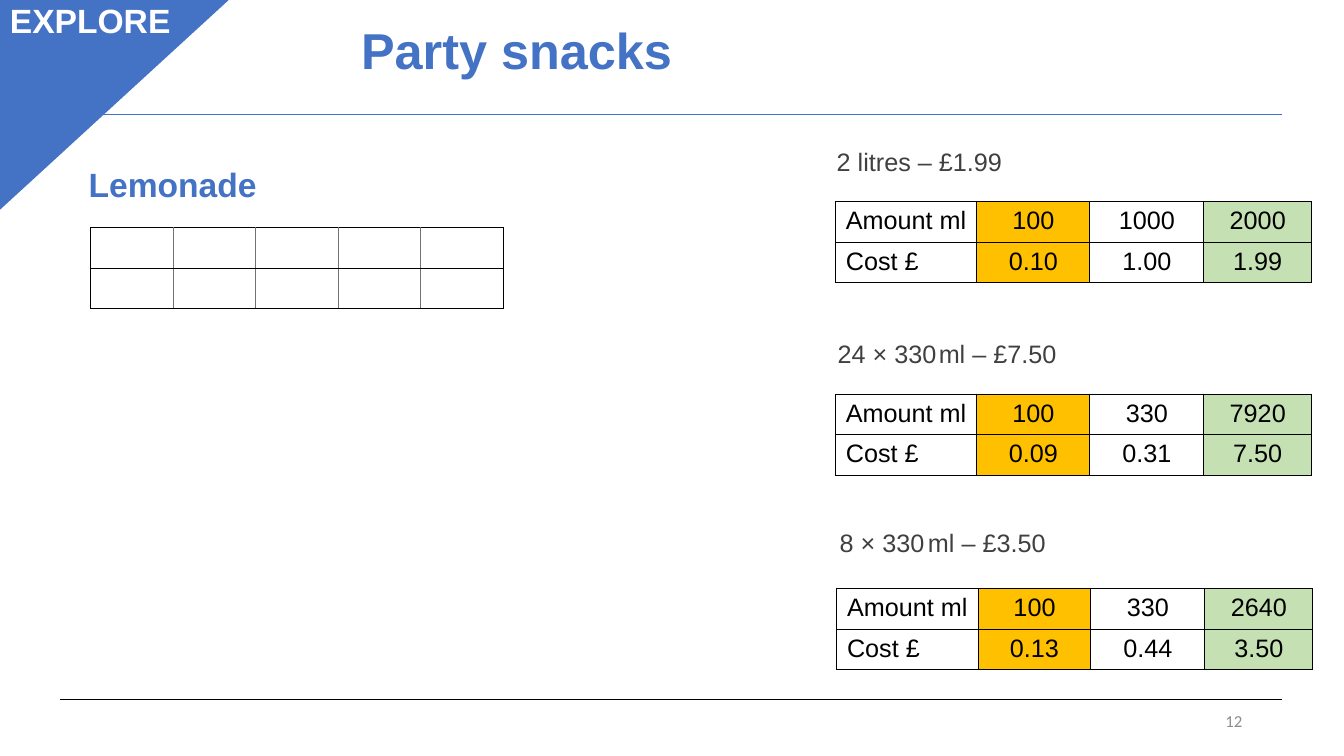
import lxml.etree
import pptx
import pptx.dml.color
import pptx.enum.shapes
import pptx.enum.text
import pptx.oxml.ns
import pptx.util

WIDTH = pptx.util.Inches(13.33)
HEIGHT = pptx.util.Inches(7.5)
COLOURS = {
    "blue": "4472C4", "white": "FFFFFF", "black": "000000", "label": "404040",
    "number": "8C8C8C", "grid": "767171", "amber": "FFC000", "green": "C5E0B3",
}
ALIGN = pptx.enum.text.PP_ALIGN
ANCHOR = pptx.enum.text.MSO_ANCHOR
SHAPES = pptx.enum.shapes.MSO_SHAPE
ROW_HEIGHT = 5.36
PRICE_COLUMNS = [10.5, 8.4, 8.48, 8.03]
PRICE_FILLS = [None, "amber", None, "green"]


def across(percent):
    return round(WIDTH * percent / 100)


def down(percent):
    return round(HEIGHT * percent / 100)


def place(left, top, width, height):
    """Turn percentages of the slide into lengths."""
    return across(left), down(top), across(width), down(height)


def colour(name):
    return pptx.dml.color.RGBColor.from_string(COLOURS[name])


def style(paragraph, size, colour_name, bold=False, font="Arial", align=ALIGN.LEFT):
    paragraph.alignment = align
    paragraph.font.name = font
    paragraph.font.size = pptx.util.Pt(size)
    paragraph.font.bold = bold
    paragraph.font.color.rgb = colour(colour_name)


def add_text(slide, box, text, size, colour_name, anchor=ANCHOR.TOP, **options):
    frame = slide.shapes.add_textbox(*place(*box)).text_frame
    frame.word_wrap = True
    frame.vertical_anchor = anchor
    paragraph = frame.paragraphs[0]
    paragraph.text = text
    style(paragraph, size, colour_name, **options)
    return paragraph


def add_shape(slide, preset, box, fill):
    shape = slide.shapes.add_shape(preset, *place(*box))
    shape.shadow.inherit = False
    shape.fill.solid()
    shape.fill.fore_color.rgb = colour(fill)
    shape.line.fill.background()
    return shape


def add_rule(slide, top, colour_name):
    left, right, level = across(4.43), across(95.42), down(top)
    rule = slide.shapes.add_connector(
        pptx.enum.shapes.MSO_CONNECTOR.STRAIGHT, left, level, right, level)
    rule.line.color.rgb = colour(colour_name)
    rule.line.width = pptx.util.Pt(0.75)
    lxml.etree.SubElement(rule._element.spPr, pptx.oxml.ns.qn("a:effectLst"))


def set_borders(cell, borders):
    """Draw the left, right, top and bottom borders, each a colour and a width."""
    properties = cell._tc.get_or_add_tcPr()
    for index, (side, (colour_name, width)) in enumerate(zip("LRTB", borders)):
        line = lxml.etree.Element(pptx.oxml.ns.qn(f"a:ln{side}"),
                                  w=str(pptx.util.Pt(width)))
        fill = lxml.etree.SubElement(line, pptx.oxml.ns.qn("a:solidFill"))
        lxml.etree.SubElement(fill, pptx.oxml.ns.qn("a:srgbClr"),
                              val=COLOURS[colour_name])
        properties.insert(index, line)


def add_table(slide, left, top, columns, rows, fills, divider):
    """Add a table with black edges and the given divider between columns."""
    box = place(left, top, sum(columns), ROW_HEIGHT * len(rows))
    table = slide.shapes.add_table(len(rows), len(columns), *box).table
    table.first_row = table.horz_banding = False
    edge, middle = ("black", 0.75), ("black", 1)
    last_row, last_column = len(rows) - 1, len(columns) - 1
    for column, width in zip(table.columns, columns):
        column.width = across(width)
    for r, texts in enumerate(rows):
        table.rows[r].height = down(ROW_HEIGHT)
        for c, text in enumerate(texts):
            cell = table.cell(r, c)
            paragraph = cell.text_frame.paragraphs[0]
            paragraph.text = text
            style(paragraph, 18, "black", align=ALIGN.CENTER if c else ALIGN.LEFT)
            if fills[c]:
                cell.fill.solid()
                cell.fill.fore_color.rgb = colour(fills[c])
            else:
                cell.fill.background()
            set_borders(cell, [
                divider if c else edge,
                divider if c < last_column else edge,
                middle if r else edge,
                middle if r < last_row else edge,
            ])


def add_offer(slide, label_box, table_left, table_top, label, amounts, costs):
    """Add a price label, given as (text, size) runs, above its table."""
    paragraph = add_text(slide, label_box, "", 18, "label")
    for text, size in label:
        run = paragraph.add_run()
        run.text = text
        run.font.size = pptx.util.Pt(size)
    rows = [["Amount ml", *amounts], ["Cost £", *costs]]
    add_table(slide, table_left, table_top, PRICE_COLUMNS, rows, PRICE_FILLS,
              ("black", 0.75))


def add_corner(slide):
    corner = add_shape(slide, SHAPES.ISOSCELES_TRIANGLE, (0, -0.27, 17.18, 28), "blue")
    corner.adjustments[0] = 0
    corner.rotation = 180
    corner._element.spPr.xfrm.set("flipH", "1")
    add_text(slide, (0, -0.67, 13.95, 6.67), "EXPLORE", 24, "white", bold=True)


def add_title(slide):
    title = add_shape(slide, SHAPES.RECTANGLE, (17.18, 0, 41.49, 14), "white")
    title.text_frame.vertical_anchor = ANCHOR.MIDDLE
    paragraph = title.text_frame.paragraphs[0]
    paragraph.text = " Party snacks"
    paragraph.line_spacing = 0.9
    style(paragraph, 36, "blue", bold=True, align=ALIGN.CENTER)


def main():
    presentation = pptx.Presentation()
    presentation.slide_width, presentation.slide_height = WIDTH, HEIGHT
    slide = presentation.slides.add_slide(presentation.slide_layouts[6])

    add_rule(slide, 92.53, "black")
    add_rule(slide, 15.2, "blue")
    add_text(slide, (70.67, 92.67, 22.51, 5.33), "12", 12, "number",
             anchor=ANCHOR.MIDDLE, font="Calibri", align=ALIGN.RIGHT)
    add_text(slide, (5.85, 21.07, 20.56, 6.67), "Lemonade", 24, "blue", bold=True)
    add_corner(slide)
    add_title(slide)

    add_table(slide, 6.75, 30.13, [6.14] * 5, [[""] * 5] * 2, [None] * 5, ("grid", 1))
    add_offer(slide, (61.52, 18.67, 14.4, 5.33), 62.19, 26.67,
              [("2 litres – £1.99", 18)],
              ["100", "1000", "2000"], ["0.10", "1.00", "1.99"])
    add_offer(slide, (61.59, 44.13, 18.3, 5.33), 62.19, 52.13,
              [("24 × 330", 18), (" ", 6), ("ml – £7.50", 18)],
              ["100", "330", "7920"], ["0.09", "0.31", "7.50"])
    add_offer(slide, (61.74, 69.07, 17.25, 5.33), 62.27, 77.87,
              [("8 × 330", 18), (" ", 9), ("ml – £3.50", 18)],
              ["100", "330", "2640"], ["0.13", "0.44", "3.50"])
    presentation.save("out.pptx")


if __name__ == "__main__":
    main()
